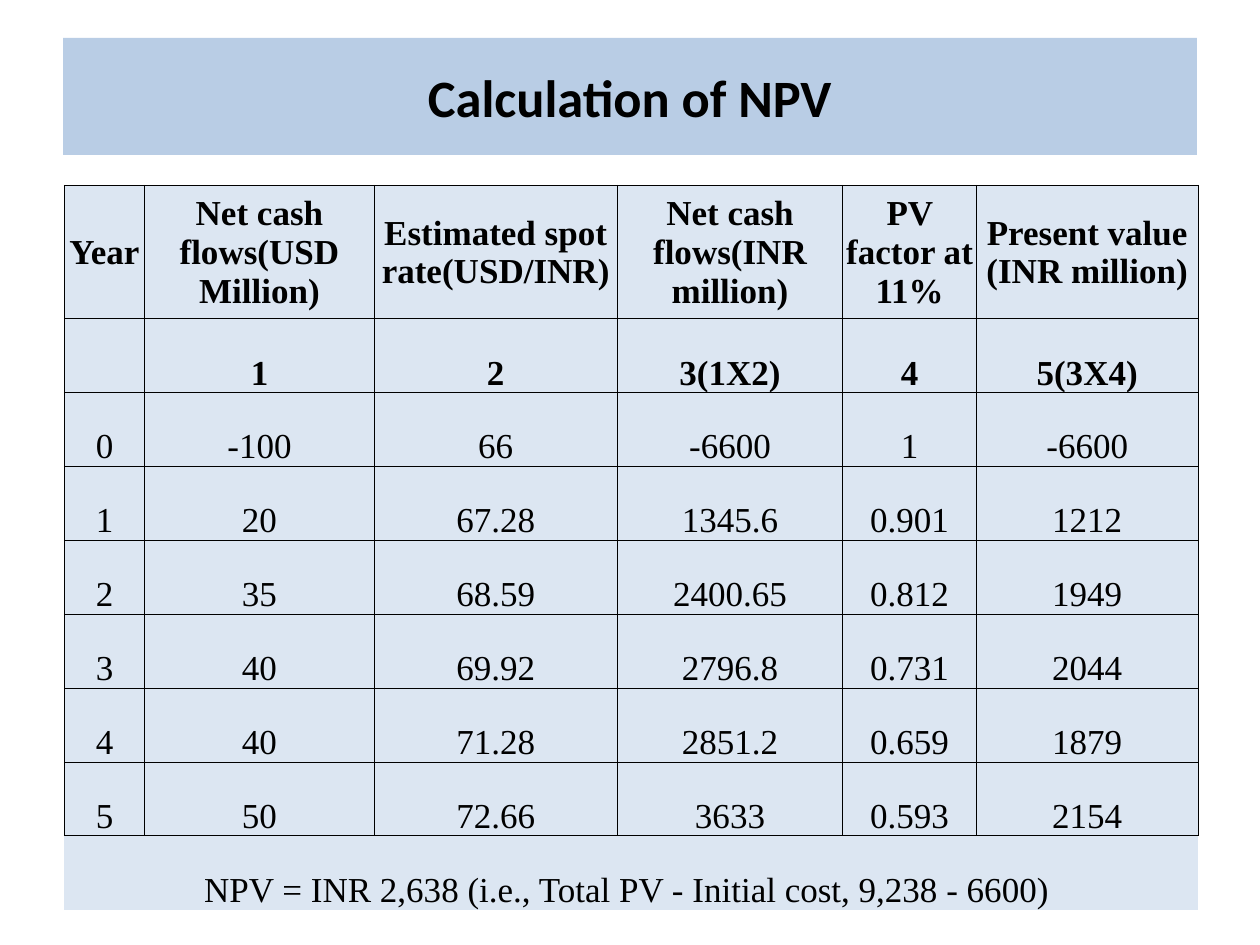
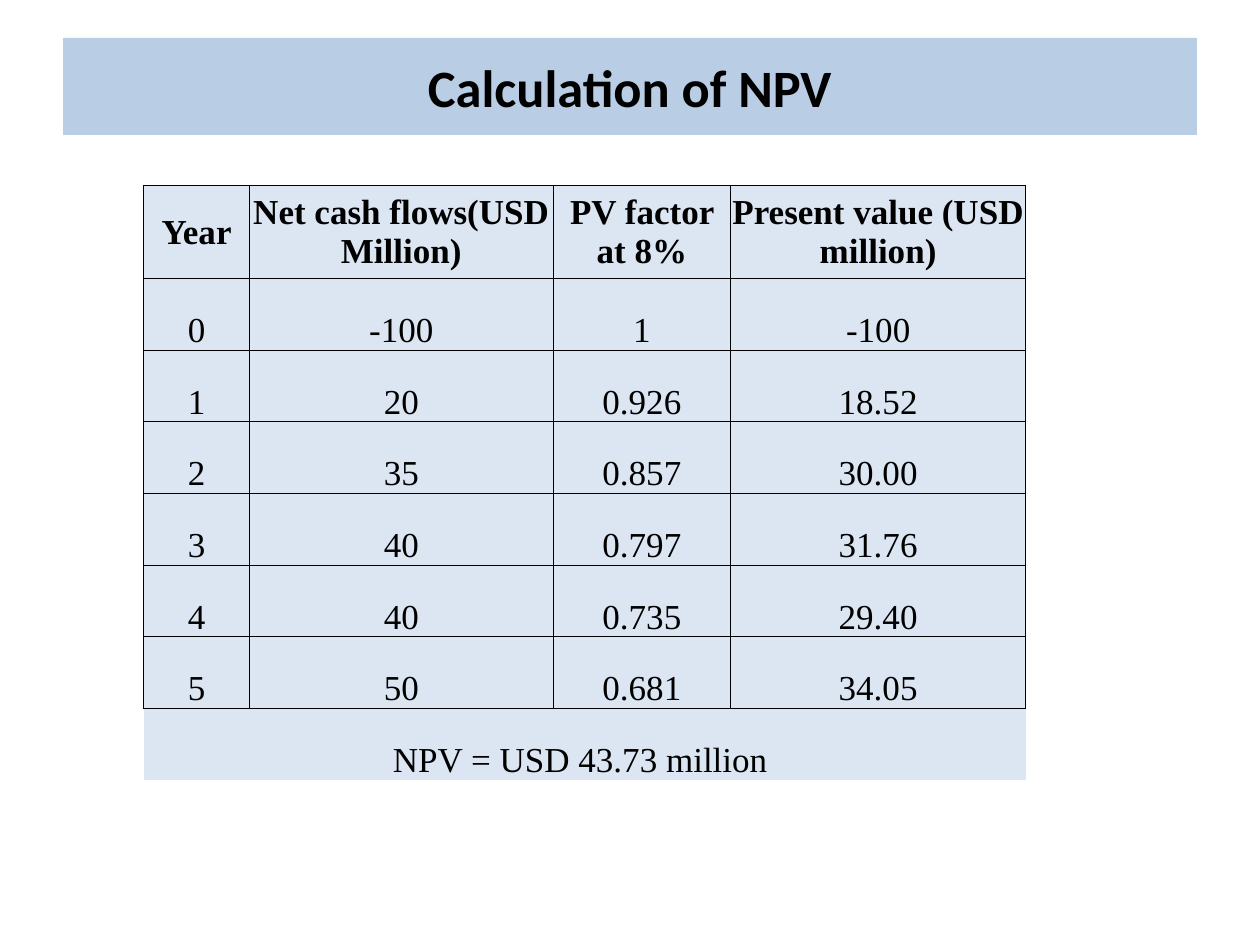
from lxml import etree
from pptx import Presentation
from pptx.dml.color import RGBColor
from pptx.enum.text import MSO_ANCHOR, PP_ALIGN
from pptx.oxml.ns import qn
from pptx.util import Inches, Pt

CENTER = PP_ALIGN.CENTER
MIDDLE, BOTTOM = MSO_ANCHOR.MIDDLE, MSO_ANCHOR.BOTTOM
BLACK = RGBColor(0x00, 0x00, 0x00)
TITLE_BLUE = RGBColor(0xB9, 0xCD, 0xE5)
CELL_BLUE = RGBColor(0xDC, 0xE6, 0xF2)
TABLE_TOP = 1.47

SLIDES = [
    {
        "title_height": 0.93, "left": 0.51, "height": 5.75,
        "header_height": 1.06, "bold_rows": 2,
        "columns": [0.64, 1.82, 1.93, 1.79, 1.06, 1.76],
        "rows": [
            ["Year", "Net cash flows(USD Million)", "Estimated spot rate(USD/INR)",
             "Net cash flows(INR million)", "PV factor at 11%",
             "Present value (INR million)"],
            ["", "1", "2", "3(1X2)", "4", "5(3X4)"],
            ["0", "-100", "66", "-6600", "1", "-6600"],
            ["1", "20", "67.28", "1345.6", "0.901", "1212"],
            ["2", "35", "68.59", "2400.65", "0.812", "1949"],
            ["3", "40", "69.92", "2796.8", "0.731", "2044"],
            ["4", "40", "71.28", "2851.2", "0.659", "1879"],
            ["5", "50", "72.66", "3633", "0.593", "2154"],
        ],
        "npv": "NPV = INR 2,638 (i.e., Total PV - Initial cost, 9,238 - 6600) ",
    },
    {
        "title_height": 0.77, "left": 1.14, "height": 4.72,
        "header_height": 0.74, "bold_rows": 1,
        "columns": [0.84, 2.41, 1.41, 2.34],
        "rows": [
            ["Year", "Net cash flows(USD Million)", "PV factor at 8%",
             "Present value (USD million)"],
            ["0", "-100", "1", "-100"],
            ["1", "20", "0.926", "18.52"],
            ["2", "35", "0.857", "30.00"],
            ["3", "40", "0.797", "31.76"],
            ["4", "40", "0.735", "29.40"],
            ["5", "50", "0.681", "34.05"],
        ],
        "npv": "NPV = USD 43.73 million ",
    },
]


def set_text(tf, text, font, size, bold):
    tf.text = text
    p = tf.paragraphs[0]
    p.alignment = CENTER
    for r in p.runs:
        r.font.name = font
        r.font.size = Pt(size)
        r.font.bold = bold
        r.font.color.rgb = BLACK


def format_cell(cell, anchor, ruled_sides):
    """Rule the given sides in black, leave the others open, and fill the cell."""
    cell.margin_left = cell.margin_right = cell.margin_top = Inches(0.01)
    cell.margin_bottom = 0
    cell.vertical_anchor = anchor
    tcPr = cell._tc.get_or_add_tcPr()
    for side in "LRTB":
        ln = etree.SubElement(tcPr, qn(f"a:ln{side}"), w=str(Pt(0.5)))
        if side in ruled_sides:
            fill = etree.SubElement(ln, qn("a:solidFill"))
            etree.SubElement(fill, qn("a:srgbClr"), val=str(BLACK))
        else:
            etree.SubElement(ln, qn("a:noFill"))
    cell.fill.solid()
    cell.fill.fore_color.rgb = CELL_BLUE


prs = Presentation()
prs.slide_width, prs.slide_height = Inches(10), Inches(7.5)
title_only = prs.slide_layouts[5]

for data in SLIDES:
    s = prs.slides.add_slide(title_only)
    title = s.shapes.title
    title.left, title.top = Inches(0.5), Inches(0.3)
    title.width, title.height = Inches(9), Inches(data["title_height"])
    title.fill.solid()
    title.fill.fore_color.rgb = TITLE_BLUE
    title.text_frame.vertical_anchor = MIDDLE
    set_text(title.text_frame, "Calculation of NPV", "Calibri", 30, True)

    columns, rows = data["columns"], data["rows"]
    npv_row = len(rows)
    table = s.shapes.add_table(
        npv_row + 1, len(columns), Inches(data["left"]), Inches(TABLE_TOP),
        Inches(sum(columns)), Inches(data["height"])).table
    table.first_row = table.horz_banding = False
    for column, width in zip(table.columns, columns):
        column.width = Inches(width)
    row_height = (data["height"] - data["header_height"]) / npv_row
    for row in table.rows:
        row.height = Inches(row_height)
    table.rows[0].height = Inches(data["header_height"])

    for i, values in enumerate(rows):
        for j, value in enumerate(values):
            cell = table.cell(i, j)
            set_text(cell.text_frame, value, "Times New Roman", 20,
                     i < data["bold_rows"])
            format_cell(cell, BOTTOM if i else MIDDLE, "LRTB")

    table.cell(npv_row, 0).merge(table.cell(npv_row, len(columns) - 1))
    set_text(table.cell(npv_row, 0).text_frame, data["npv"],
             "Times New Roman", 20, False)
    for j in range(len(columns)):
        format_cell(table.cell(npv_row, j), BOTTOM, "T")

prs.save("out.pptx")
